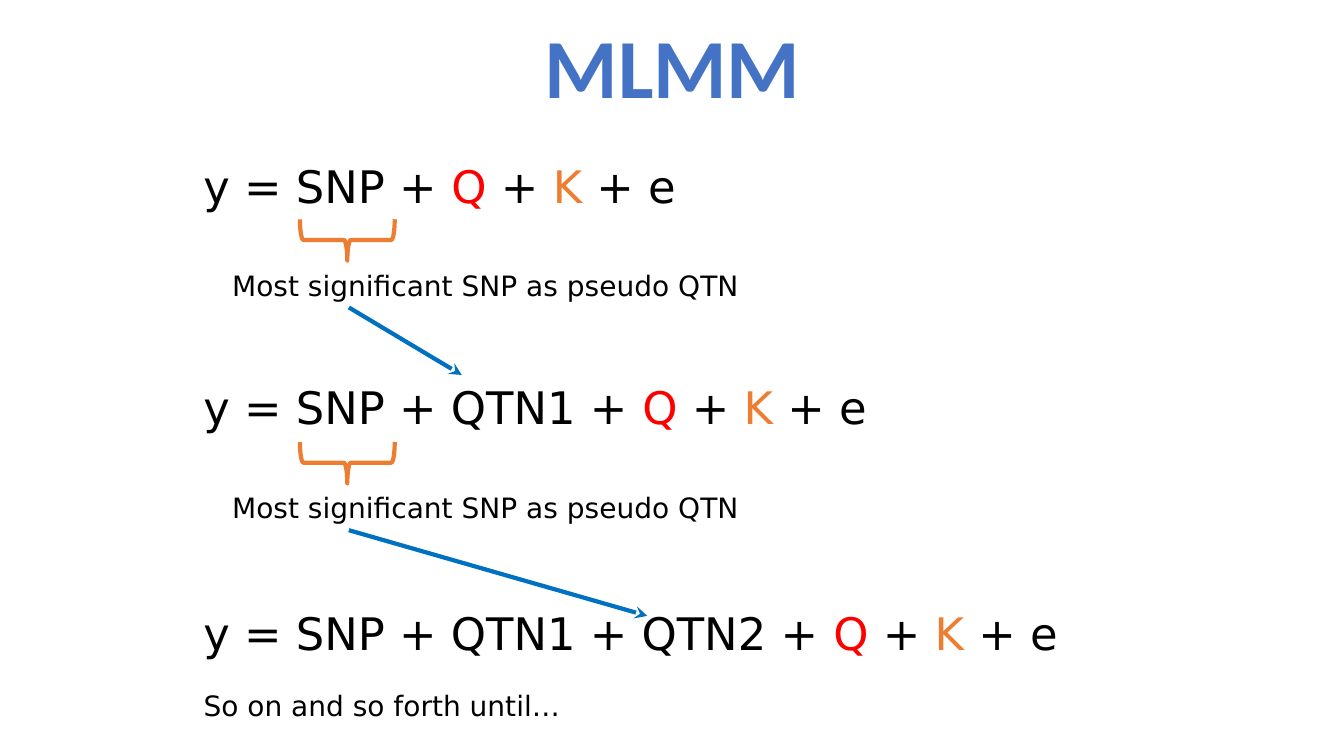
from lxml.etree import SubElement
from pptx import Presentation
from pptx.dml.color import RGBColor
from pptx.enum.shapes import MSO_CONNECTOR, MSO_SHAPE
from pptx.enum.text import MSO_ANCHOR, PP_ALIGN
from pptx.oxml.ns import qn
from pptx.util import Inches, Pt

COLORS = {
    "title": "4472C4",
    "text": "000000",
    "q": "FF0000",
    "k": "ED7D31",
    "brace": "ED7D31",
    "arrow": "0070C0",
}
BODY_FONT = "DejaVu Sans"
STEP_PITCH = 2.21


def color(name):
    return RGBColor.from_string(COLORS[name])


def add_text(slide, runs, left, top, width, height, *, size=20, font=BODY_FONT,
             bold=False, align=PP_ALIGN.LEFT, anchor=MSO_ANCHOR.TOP, spacing=1.0):
    """Add one paragraph made of (text, color name) runs."""
    box = slide.shapes.add_textbox(Inches(left), Inches(top), Inches(width), Inches(height))
    frame = box.text_frame
    frame.word_wrap = True
    frame.vertical_anchor = anchor
    paragraph = frame.paragraphs[0]
    paragraph.alignment = align
    paragraph.line_spacing = spacing
    for text, color_name in runs:
        run = paragraph.add_run()
        run.text = text
        run.font.size = Pt(size)
        run.font.name = font
        run.font.bold = bold
        run.font.color.rgb = color(color_name)


def add_equation(slide, top, qtn_count):
    terms = ["SNP"] + [f"QTN{n}" for n in range(1, qtn_count + 1)]
    fixed_part = "y = " + " + ".join(terms) + " + "
    runs = [(fixed_part, "text"), ("Q ", "q"), ("+ ", "text"), ("K ", "k"), ("+ e", "text")]
    add_text(slide, runs, 1.92, top, 9.53, 0.64, size=32)


def add_brace(slide, top):
    brace = slide.shapes.add_shape(
        MSO_SHAPE.LEFT_BRACE, Inches(3.24), Inches(top), Inches(0.41), Inches(0.94))
    brace.rotation = 270
    brace.shadow.inherit = False
    brace.fill.background()
    brace.line.color.rgb = color("brace")
    brace.line.width = Pt(3)


def add_arrow(slide, start, end):
    arrow = slide.shapes.add_connector(
        MSO_CONNECTOR.STRAIGHT, *(Inches(value) for value in (*start, *end)))
    arrow.line.color.rgb = color("arrow")
    arrow.line.width = Pt(3)
    SubElement(arrow.line._get_or_add_ln(), qn("a:tailEnd"), type="stealth")
    SubElement(arrow._element.spPr, qn("a:effectLst"))


def main():
    prs = Presentation()
    prs.slide_width, prs.slide_height = Inches(13.33), Inches(7.5)
    slide = prs.slides.add_slide(prs.slide_layouts[6])

    # Title
    add_text(slide, [("MLMM", "title")], 2.17, 0.08, 9, 1.25, size=60, font="Calibri",
             bold=True, align=PP_ALIGN.CENTER, anchor=MSO_ANCHOR.MIDDLE, spacing=0.9)

    # Models, each with one more pseudo QTN
    for qtn_count, top in enumerate((1.53, 3.72, 5.96)):
        add_equation(slide, top, qtn_count)

    # Each step from the SNP to the next model's QTN
    for step, arrow_tip in enumerate([(4.58, 3.72), (6.42, 6.11)]):
        offset = step * STEP_PITCH
        add_text(slide, [("Most significant SNP as pseudo QTN", "text")],
                 1.87, 2.61 + offset, 5.89, 0.44, align=PP_ALIGN.CENTER)
        add_arrow(slide, (3.46, 3.05 + offset), arrow_tip)
        add_brace(slide, 1.91 + offset)

    # Closing line
    add_text(slide, [("So on and so forth until…", "text")], 1.92, 6.78, 5.89, 0.44)

    prs.save("out.pptx")


if __name__ == "__main__":
    main()
